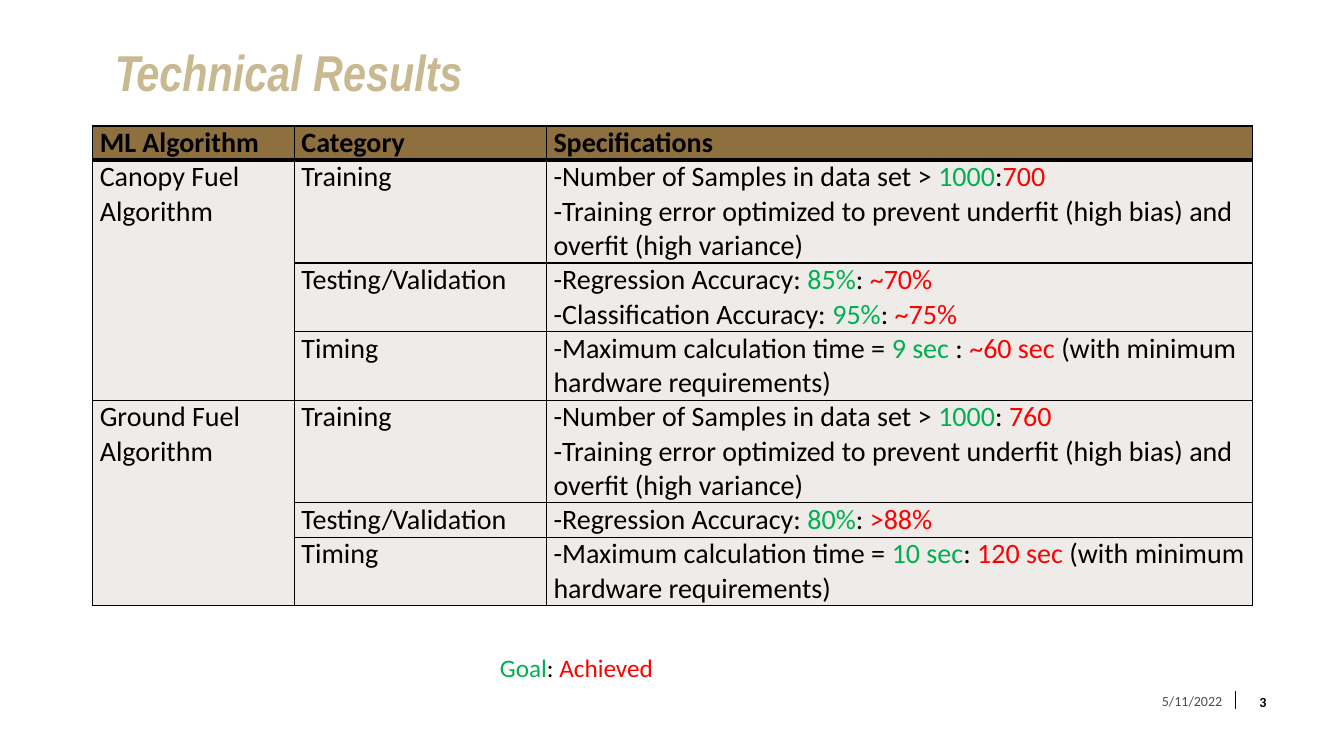
from dataclasses import dataclass

from lxml import etree
from pptx import Presentation
from pptx.dml.color import RGBColor
from pptx.enum.shapes import MSO_CONNECTOR, MSO_SHAPE
from pptx.enum.text import MSO_ANCHOR, PP_ALIGN
from pptx.oxml import parse_xml
from pptx.oxml.ns import nsdecls, qn
from pptx.util import Inches, Pt

LEFT, CENTER, RIGHT = PP_ALIGN.LEFT, PP_ALIGN.CENTER, PP_ALIGN.RIGHT
TOP, MIDDLE = MSO_ANCHOR.TOP, MSO_ANCHOR.MIDDLE


@dataclass(frozen=True)
class Theme:
    title_font: str = "Arial Narrow"
    body_font: str = "Calibri"
    title_size: int = 36
    table_size: int = 20
    legend_size: int = 18
    footer_size: int = 10
    title: str = "C9B991"
    text: str = "000000"
    muted: str = "4D4D4D"
    goal: str = "00B050"
    achieved: str = "FF0000"
    header_fill: str = "8E6F3E"
    body_fill: str = "EEEBE8"
    border: str = "000000"


theme = Theme()


def write_text(frame, paragraphs, size, font=theme.body_font, bold=False, italic=False,
               align=LEFT, anchor=TOP, margins=(0.1, 0.05)):
    """Fill a text frame; each paragraph is a list of (text, colour) runs."""
    side, edge = Inches(margins[0]), Inches(margins[1])
    frame_format = {"word_wrap": True, "vertical_anchor": anchor, "margin_left": side,
                    "margin_right": side, "margin_top": edge, "margin_bottom": edge}
    for name, value in frame_format.items():
        setattr(frame, name, value)
    run_format = {"name": font, "size": Pt(size), "bold": bold, "italic": italic}
    for index, runs in enumerate(paragraphs):
        paragraph = frame.add_paragraph() if index else frame.paragraphs[0]
        paragraph.alignment = align
        for text, color in runs:
            run = paragraph.add_run()
            run.text = text
            for name, value in run_format.items():
                setattr(run.font, name, value)
            run.font.color.rgb = RGBColor.from_string(color)


def compare(label, goal, separator, achieved, ending=""):
    """Return the runs of a line that sets a goal against the achieved value."""
    runs = [(label, theme.text), (goal, theme.goal),
            (separator, theme.text), (achieved, theme.achieved)]
    return runs + [(ending, theme.text)] if ending else runs


presentation = Presentation()
presentation.slide_width = Inches(13.33)
presentation.slide_height = Inches(7.5)
slide = presentation.slides.add_slide(presentation.slide_layouts[6])

# Title
title = slide.shapes.add_textbox(Inches(1.14), Inches(0.48), Inches(10.1), Inches(0.56))
write_text(title.text_frame, [[("Technical Results", theme.title)]], theme.title_size,
           font=theme.title_font, bold=True, italic=True, margins=(0, 0))
title.text_frame.paragraphs[0].line_spacing = 0.9

# Footer
divider = slide.shapes.add_connector(MSO_CONNECTOR.STRAIGHT, Inches(12.25), Inches(6.86),
                                     Inches(12.25), Inches(7.03))
divider.line.width = Pt(0.5)
divider.line.color.rgb = RGBColor.from_string(theme.border)
etree.SubElement(divider._element.spPr, qn("a:effectLst"))

date = slide.shapes.add_textbox(Inches(11.09), Inches(6.78), Inches(1.13), Inches(0.35))
write_text(date.text_frame, [[("5/11/2022", theme.muted)]], theme.footer_size,
           align=RIGHT, anchor=MIDDLE)

page_number = slide.shapes.add_shape(MSO_SHAPE.OVAL, Inches(12.26), Inches(6.76),
                                     Inches(0.53), Inches(0.4))
page_number.shadow.inherit = False
page_number.fill.background()
page_number.line.fill.background()
write_text(page_number.text_frame, [[("3", theme.text)]], theme.footer_size, bold=True,
           align=CENTER, anchor=MIDDLE, margins=(0.02, 0.05))

# Results table: algorithm, category, specification lines, height in text lines
samples = "-Number of Samples in data set > "
regression = "-Regression Accuracy: "
timing = "-Maximum calculation time = "
hardware = "(with minimum hardware requirements)"
training_error = [("-Training error optimized to prevent underfit (high bias) "
                   "and overfit (high variance)", theme.text)]
rows = [
    ("ML Algorithm", "Category", [[("Specifications", theme.text)]], 1),
    ("Canopy Fuel Algorithm", "Training",
     [compare(samples, "1000", ":", "700"), training_error], 3),
    ("", "Testing/Validation",
     [compare(regression, "85%", ": ", "~70%"),
      compare("-Classification Accuracy: ", "95%", ": ", "~75%")], 2),
    ("", "Timing", [compare(timing, "9 sec ", ": ", "~60 sec ", hardware)], 2),
    ("Ground Fuel Algorithm", "Training",
     [compare(samples, "1000", ": ", "760"), training_error], 3),
    ("", "Testing/Validation", [compare(regression, "80%", ": ", ">88%")], 1),
    ("", "Timing", [compare(timing, "10 sec", ": ", "120 sec ", hardware)], 2),
]
line_height = 0.34
table_height = line_height * sum(row[3] for row in rows)
table = slide.shapes.add_table(len(rows), 3, Inches(0.92), Inches(1.25),
                               Inches(11.5), Inches(table_height)).table
for column, width in zip(table.columns, (2, 2.5, 7)):
    column.width = Inches(width)

for row_index, (algorithm, category, specifications, lines) in enumerate(rows):
    is_header = row_index == 0
    table.rows[row_index].height = Inches(line_height * lines)
    contents = [[[(algorithm, theme.text)]] if algorithm else [],
                [[(category, theme.text)]], specifications]
    border_widths = {"L": 1, "R": 1, "T": 3 if row_index == 1 else 1, "B": 3 if is_header else 1}
    for column_index, paragraphs in enumerate(contents):
        cell = table.cell(row_index, column_index)
        write_text(cell.text_frame, paragraphs, theme.table_size, bold=is_header)
        for side, margin in {"left": 0.07, "right": 0.07, "top": 0, "bottom": 0}.items():
            setattr(cell, f"margin_{side}", Inches(margin))
        cell_properties = cell._tc.get_or_add_tcPr()
        for side, width in border_widths.items():
            cell_properties.append(parse_xml(
                f'<a:ln{side} {nsdecls("a")} w="{Pt(width)}"><a:solidFill>'
                f'<a:srgbClr val="{theme.border}"/></a:solidFill></a:ln{side}>'))
        cell.fill.solid()
        cell.fill.fore_color.rgb = RGBColor.from_string(
            theme.header_fill if is_header else theme.body_fill)

for first_row in (1, 4):
    table.cell(first_row, 0).merge(table.cell(first_row + 2, 0))

# Legend
legend = slide.shapes.add_textbox(Inches(4.86), Inches(6.42), Inches(3), Inches(0.4))
write_text(legend.text_frame, [compare("", "Goal", ": ", "Achieved")[1:]], theme.legend_size)

presentation.save("out.pptx")
